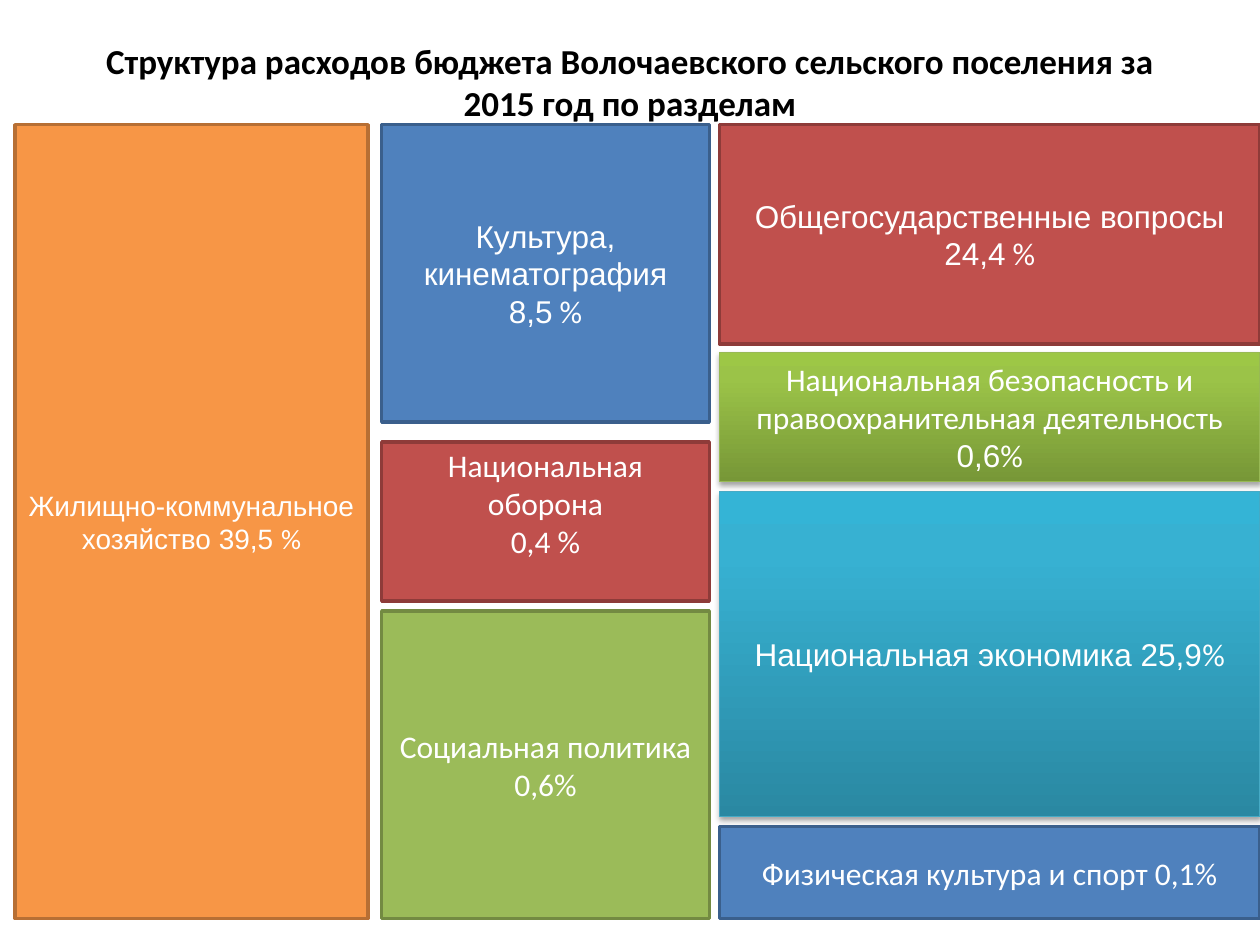
from lxml.etree import SubElement as Sub
from pptx import Presentation
from pptx.dml.color import RGBColor as RGB
from pptx.enum.shapes import MSO_SHAPE as Shape
from pptx.enum.text import MSO_ANCHOR as Anchor, PP_ALIGN as Align
from pptx.oxml.ns import qn
from pptx.util import Inches, Pt

# Content: each block is (height, style, text size, lines); a line is a list of (text, font)
A, C = "Arial", "Calibri"
TITLE = "Структура расходов бюджета Волочаевского сельского поселения за 2015 год по разделам"
COLS = [
    (0.12, 2.8, [
        (6.3, "orange", 16, [[("Жилищно-коммунальное хозяйство 39,5 ", A), ("%", C)]]),
    ]),
    (3.03, 2.6, [
        (2.36, "blue", 18, [[("Культура, кинематография", A)], [("8,5", A), (" %", C)]]),
        (1.26, "red", 18, [[("Национальная оборона", C)], [("0,4 %", C)]]),
        (2.44, "green", 18, [[("Социальная политика 0,6%", C)]]),
    ]),
    (5.71, 4.29, [
        (1.74, "red", 18, [[("Общегосударственные вопросы 24,4", A), (" %", C)]]),
        (1.02, "lime", 18, [[("Национальная безопасность и правоохранительная деятельность", C)],
                            [("0,6", A), ("%", C)]]),
        (2.58, "aqua", 18, [[("Национальная экономика 25,9", A), ("%", C)]]),
        (0.73, "blue", 18, [[("Физическая культура и спорт 0,1%", C)]]),
    ]),
]
TOP, END = 0.99, 7.29
GAP = 0.08
RAISED = "Национальная оборона"  # its text sits one half line above the middle

# Fill and outline; a list of fills is a gradient from bottom to top
COLORS = {
    "orange": ("F79646", "B76F34"),
    "blue": ("4F81BD", "3A5F8C"),
    "red": ("C0504D", "8E3B39"),
    "green": ("9BBB59", "738A42"),
    "lime": (["779737", "9BC348", "9DC746"], "98B955"),
    "aqua": (["2A88A2", "37B1D2", "34B4D6"], "46AAC5"),
    "text": "FFFFFF",
    "title": "000000",
}
STOPS = (0, 80, 100)


def hue(parent, color):
    return Sub(parent, qn("a:srgbClr"), val=color)


def shade(box, colors):
    """Three-stop gradient and a soft shadow below."""
    box.fill.gradient()
    box.fill.gradient_angle = 90
    props = box._element.spPr
    stops = props.find(qn("a:gradFill")).find(qn("a:gsLst"))
    for old in list(stops):
        stops.remove(old)
    for pos, color in zip(STOPS, colors):
        hue(Sub(stops, qn("a:gs"), pos=str(pos * 1000)), color)
    glow = Sub(props.find(qn("a:effectLst")), qn("a:outerShdw"), blurRad=str(Pt(3.1)),
               dist=str(Pt(1.8)), dir="5400000", rotWithShape="0")
    Sub(hue(glow, "000000"), qn("a:alpha"), val="35000")


def add_block(slide, left, top, width, block):
    height, style, size, lines = block
    box = slide.shapes.add_shape(Shape.RECTANGLE, *map(Inches, (left, top, width, height)))
    box.shadow.inherit = False
    fill, edge = COLORS[style]
    box.line.color.rgb = RGB.from_string(edge)
    if isinstance(fill, list):
        box.line.width = Pt(0.75)
        shade(box, fill)
    else:
        box.line.width = Pt(2)
        box.fill.solid()
        box.fill.fore_color.rgb = RGB.from_string(fill)
    frame = box.text_frame
    frame.word_wrap = True
    frame.vertical_anchor = Anchor.MIDDLE
    if lines[0][0][0] == RAISED:
        frame.margin_bottom = Inches(0.35)
    for i, line in enumerate(lines):
        para = frame.add_paragraph() if i else frame.paragraphs[0]
        para.alignment = Align.CENTER
        for text, font in line:
            add_run(para, text, font, size, COLORS["text"])


def add_run(para, text, font, size, color, bold=False):
    run = para.add_run()
    run.text = text
    run.font.name, run.font.size, run.font.bold = font, Pt(size), bold
    run.font.color.rgb = RGB.from_string(color)


deck = Presentation()
deck.slide_width, deck.slide_height = Inches(10), Inches(7.5)
slide = deck.slides.add_slide(deck.slide_layouts[5])

# Title
head = slide.shapes.title
head.left, head.top, head.width, head.height = map(Inches, (0.5, 0.3, 9, 0.69))
head.text_frame.vertical_anchor = Anchor.MIDDLE
para = head.text_frame.paragraphs[0]
para.alignment = Align.CENTER
add_run(para, TITLE, C, 20, COLORS["title"], True)

# Columns of blocks; slack in a column goes below its first block
for left, width, blocks in COLS:
    used = sum(block[0] for block in blocks) + GAP * (len(blocks) - 1)
    top = TOP
    for i, block in enumerate(blocks):
        add_block(slide, left, top, width, block)
        top += block[0] + GAP + (END - TOP - used if i == 0 else 0)

deck.save("out.pptx")
